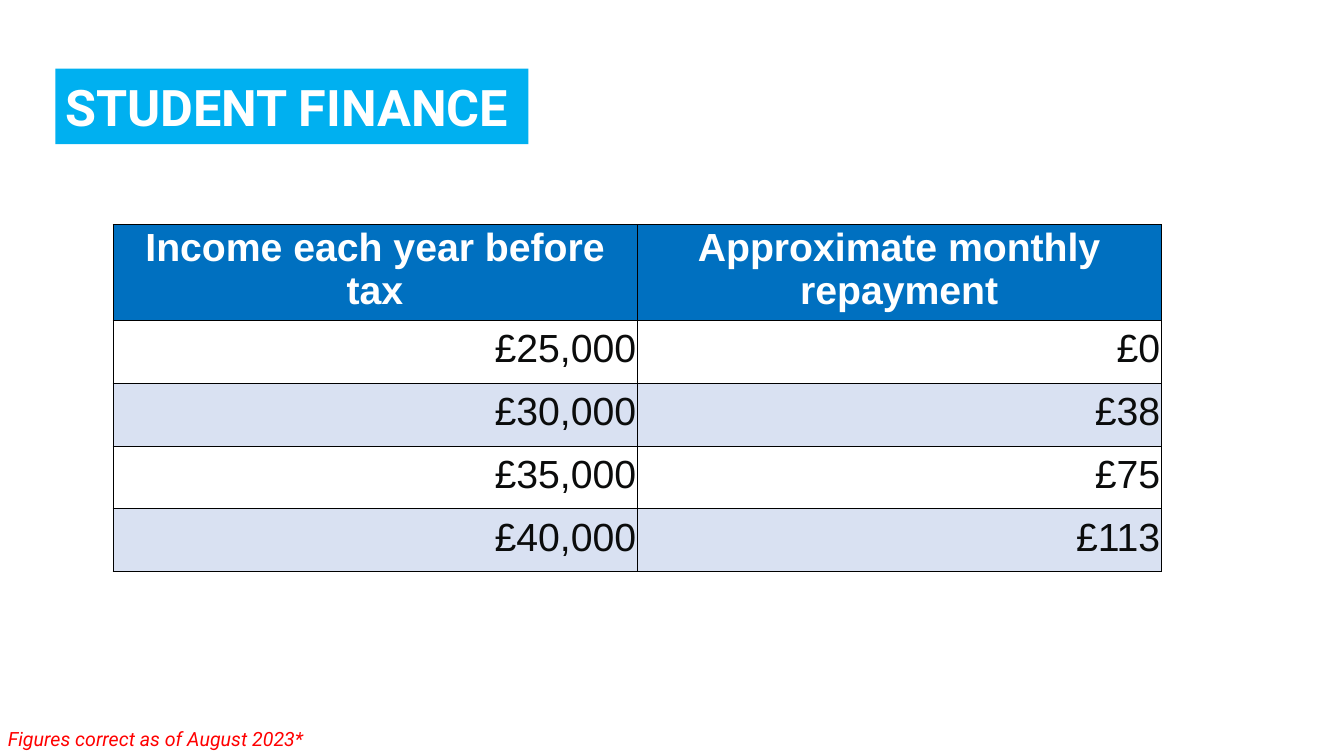
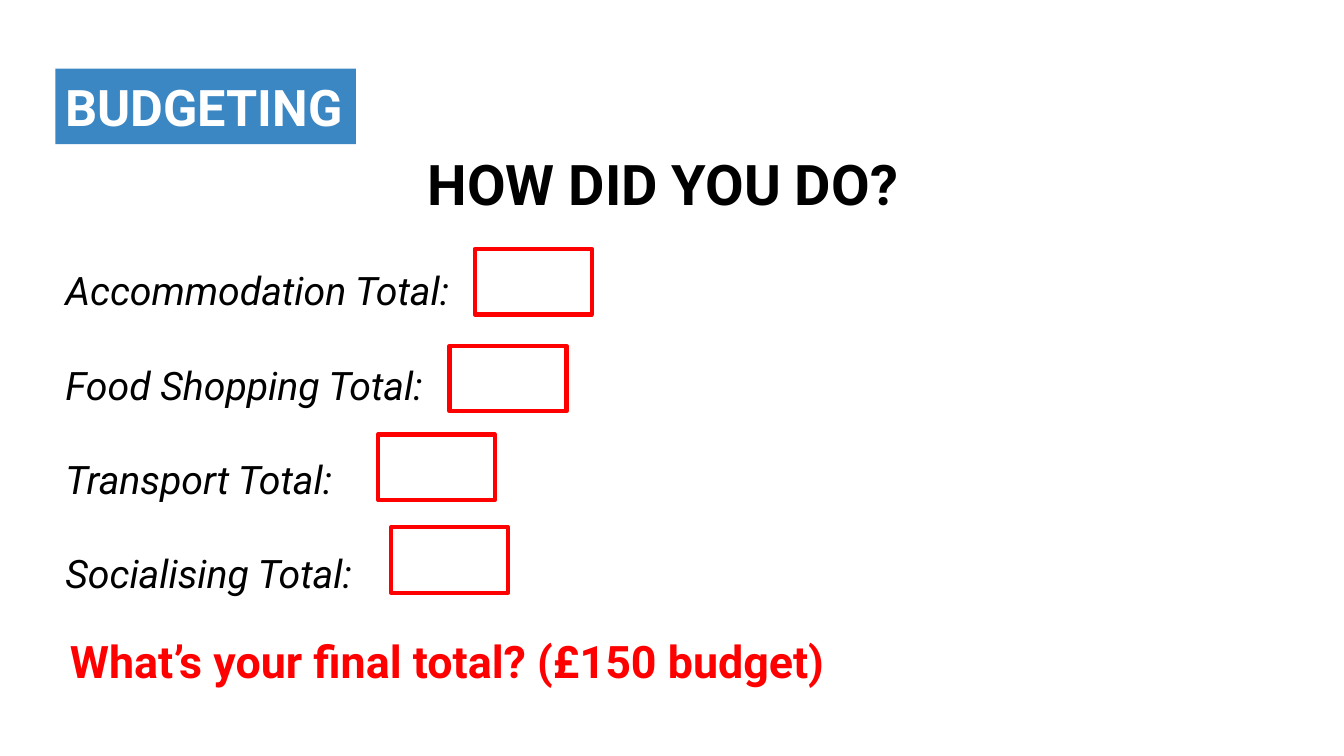
from dataclasses import dataclass

from lxml.etree import SubElement
from pptx import Presentation
from pptx.dml.color import RGBColor
from pptx.enum.shapes import MSO_SHAPE
from pptx.enum.text import MSO_ANCHOR, MSO_AUTO_SIZE, PP_ALIGN
from pptx.oxml.ns import qn
from pptx.shapes.autoshape import Shape
from pptx.slide import Slide
from pptx.table import _Cell
from pptx.text.text import TextFrame, _Paragraph
from pptx.util import Emu, Inches, Length, Pt

SLIDE_WIDTH = Inches(13.33)
SLIDE_HEIGHT = Inches(7.5)
WHITE = "FFFFFF"
BLACK = "000000"
RED = "FF0000"
SKY = "00B0F0"
STEEL = "3A87C4"
HEADER_BLUE = "0070C0"
BAND_BLUE = "D9E1F2"
INK = "0B0C0C"
MARGIN = 4.13


@dataclass(frozen=True)
class Area:
    """Left, top, width and height in percent of the slide."""

    left: float
    top: float
    width: float
    height: float

    def lengths(self) -> tuple[Length, Length, Length, Length]:
        return across(self.left), down(self.top), across(self.width), down(self.height)


@dataclass(frozen=True)
class TextStyle:
    size: float
    color: str
    bold: bool = False
    italic: bool = False
    font: str = "Roboto"
    align: PP_ALIGN = PP_ALIGN.LEFT
    line_spacing: float | None = None


@dataclass(frozen=True)
class CellStyle:
    text: TextStyle
    top_margin: float
    bottom_margin: float


@dataclass(frozen=True)
class AnswerRow:
    label: str
    box_left: float
    box_top: float


TITLE = TextStyle(36, WHITE, bold=True)
NOTE = TextStyle(14, RED, italic=True)
HEADING = TextStyle(40, BLACK, bold=True, align=PP_ALIGN.CENTER)
LABEL = TextStyle(28, BLACK, italic=True, line_spacing=2.0)
QUESTION = TextStyle(32, RED, bold=True, align=PP_ALIGN.CENTER)
HEADER_CELL = CellStyle(
    TextStyle(28, WHITE, bold=True, font="Arial", align=PP_ALIGN.CENTER), 0.01, 0
)
BODY_CELL = CellStyle(
    TextStyle(28, INK, font="Arial", align=PP_ALIGN.RIGHT), 0.07, 0.07
)

REPAYMENTS = [
    ("Income each year before tax", "Approximate monthly repayment"),
    ("£25,000", "£0"),
    ("£30,000", "£38"),
    ("£35,000", "£75"),
    ("£40,000", "£113"),
]
ANSWERS = [
    AnswerRow("Accommodation Total:", 35.33, 32.93),
    AnswerRow("Food Shopping Total:", 33.45, 45.73),
    AnswerRow("Transport Total:", 28.13, 57.47),
    AnswerRow("Socialising Total:", 29.1, 69.73),
]


def across(percent: float) -> Length:
    return Emu(round(SLIDE_WIDTH * percent / 100))


def down(percent: float) -> Length:
    return Emu(round(SLIDE_HEIGHT * percent / 100))


def color(value: str) -> RGBColor:
    return RGBColor.from_string(value)


def write_paragraph(para: _Paragraph, text: str, style: TextStyle) -> None:
    para.alignment = style.align
    if style.line_spacing is not None:
        para.line_spacing = style.line_spacing
    span = para.add_run()
    span.text = text
    span.font.name = style.font
    span.font.size = Pt(style.size)
    span.font.bold = style.bold
    span.font.italic = style.italic
    span.font.color.rgb = color(style.color)


def write_lines(frame: TextFrame, lines: list[str], style: TextStyle) -> None:
    for index, line in enumerate(lines):
        para = frame.add_paragraph() if index else frame.paragraphs[0]
        write_paragraph(para, line, style)


def add_text(page: Slide, area: Area, lines: list[str], style: TextStyle) -> None:
    frame = page.shapes.add_textbox(*area.lengths()).text_frame
    frame.word_wrap = True
    frame.auto_size = MSO_AUTO_SIZE.SHAPE_TO_FIT_TEXT
    write_lines(frame, lines, style)


def add_rectangle(page: Slide, area: Area) -> Shape:
    box = page.shapes.add_shape(MSO_SHAPE.RECTANGLE, *area.lengths())
    box.shadow.inherit = False
    return box


def add_title(page: Slide, text: str, width: float, fill: str) -> None:
    band = add_rectangle(page, Area(MARGIN, 9.07, width, 10))
    band.fill.solid()
    band.fill.fore_color.rgb = color(fill)
    band.line.fill.background()
    band.text_frame.word_wrap = True
    band.text_frame.vertical_anchor = MSO_ANCHOR.MIDDLE
    write_lines(band.text_frame, [text], TITLE)


def add_answer_box(page: Slide, row: AnswerRow) -> None:
    box = add_rectangle(page, Area(row.box_left, row.box_top, 8.7, 8.67))
    box.fill.background()
    box.line.color.rgb = color(RED)
    box.line.width = Pt(3)


def add_borders(cell: _Cell) -> None:
    properties = cell._tc.get_or_add_tcPr()
    for side in ("a:lnL", "a:lnR", "a:lnT", "a:lnB"):
        line = SubElement(properties, qn(side), w=str(Pt(0.5)))
        fill = SubElement(line, qn("a:solidFill"))
        SubElement(fill, qn("a:srgbClr"), val=BLACK)


def fill_cell(cell: _Cell, text: str, style: CellStyle, fill: str) -> None:
    add_borders(cell)
    cell.fill.solid()
    cell.fill.fore_color.rgb = color(fill)
    cell.margin_left = cell.margin_right = Inches(0.01)
    cell.margin_top = Inches(style.top_margin)
    cell.margin_bottom = Inches(style.bottom_margin)
    write_lines(cell.text_frame, [text], style.text)


def add_repayment_table(page: Slide) -> None:
    header_height, body_height = 12.67, 8.3
    height = header_height + body_height * (len(REPAYMENTS) - 1)
    area = Area(8.4, 29.73, 78, height)
    columns = len(REPAYMENTS[0])
    table = page.shapes.add_table(len(REPAYMENTS), columns, *area.lengths()).table
    for column in table.columns:
        column.width = across(area.width / columns)
    for index, values in enumerate(REPAYMENTS):
        is_header = index == 0
        table.rows[index].height = down(header_height if is_header else body_height)
        style = HEADER_CELL if is_header else BODY_CELL
        band = BAND_BLUE if index % 2 == 0 else WHITE
        fill = HEADER_BLUE if is_header else band
        for position, value in enumerate(values):
            fill_cell(table.cell(index, position), value, style, fill)


def build_finance(page: Slide) -> None:
    add_title(page, "STUDENT FINANCE", 35.18, SKY)
    note_area = Area(-0.15, 95.47, 31.43, 4.53)
    add_text(page, note_area, ["Figures correct as of August 2023*"], NOTE)
    add_repayment_table(page)


def build_budgeting(page: Slide) -> None:
    add_text(page, Area(3.3, 19.07, 92.03, 10.27), ["HOW DID YOU DO?"], HEADING)
    labels = [row.label for row in ANSWERS]
    add_text(page, Area(MARGIN, 28.4, 36.3, 49.73), labels, LABEL)
    question_area = Area(MARGIN, 83.2, 58.35, 8.53)
    add_text(page, question_area, ["What’s your final total? (£150 budget)"], QUESTION)
    for row in ANSWERS:
        add_answer_box(page, row)
    add_title(page, "BUDGETING", 22.35, STEEL)


def main() -> None:
    deck = Presentation()
    deck.slide_width = SLIDE_WIDTH
    deck.slide_height = SLIDE_HEIGHT
    blank = deck.slide_layouts[6]
    for build in (build_finance, build_budgeting):
        build(deck.slides.add_slide(blank))
    deck.save("out.pptx")


if __name__ == "__main__":
    main()
